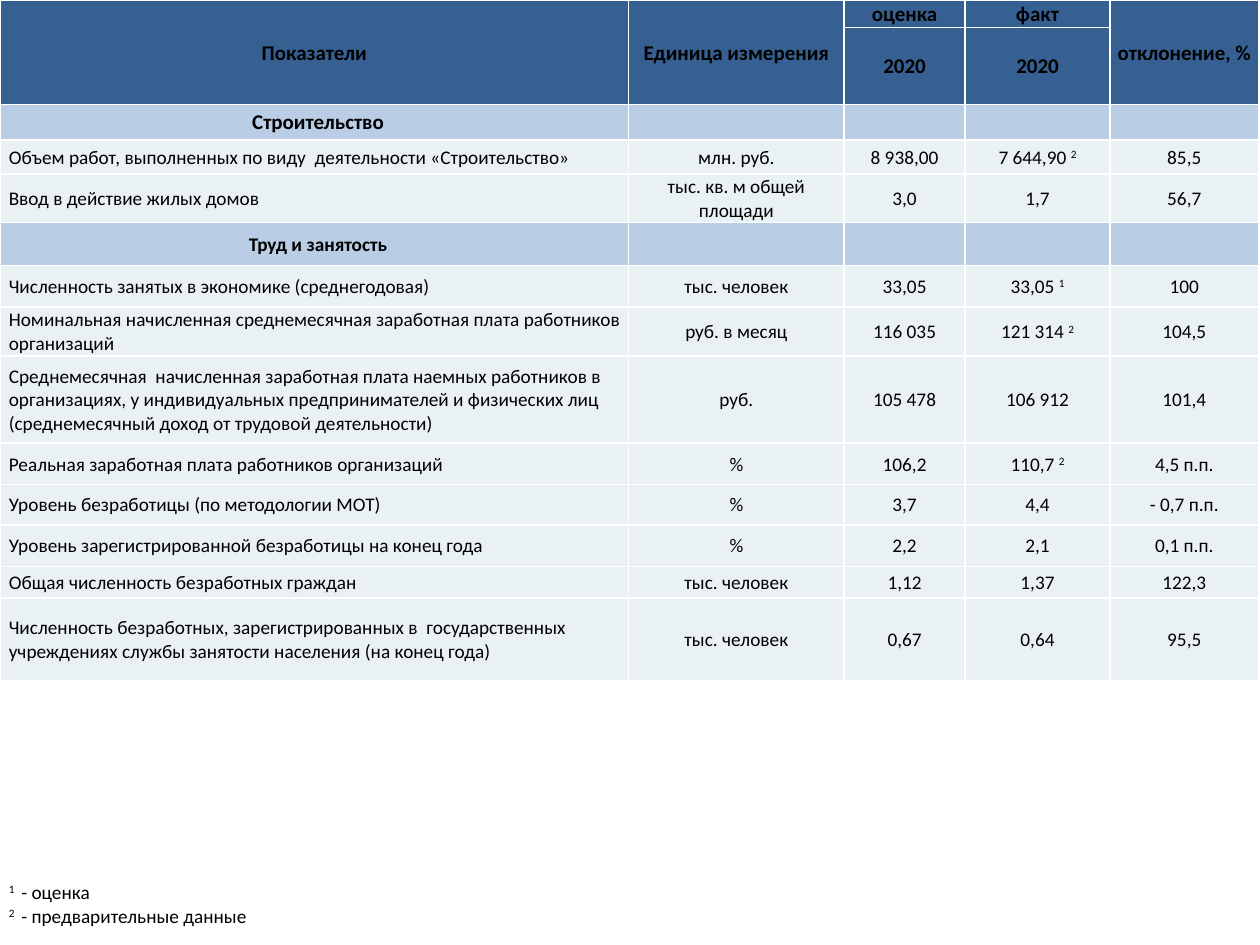
import lxml.etree
import pptx
import pptx.dml.color
import pptx.enum.text
import pptx.oxml.ns
import pptx.util

Inches = pptx.util.Inches
ALIGN = pptx.enum.text.PP_ALIGN
HEADER, SECTION, BODY, WHITE, BLACK = "376092", "B9CDE5", "E9F1F5", "FFFFFF", "000000"

COLUMN_WIDTHS = [4.99, 1.71, 0.96, 1.15, 1.18]
ROW_HEIGHTS = [0.22, 0.61, 0.28, 0.27, 0.38, 0.34, 0.33,
               0.39, 0.69, 0.33, 0.32, 0.33, 0.25, 0.66]
HEADERS = [
    ["Показатели", "Единица измерения", "оценка", "факт", "отклонение, %"],
    ["", "", "2020", "2020", ""],
]
INDICATORS = [
    ["Строительство"],
    ["Объем работ, выполненных по виду  деятельности «Строительство»",
     "млн. руб.", "8 938,00", "7 644,90 ^2", "85,5"],
    ["Ввод в действие жилых домов", "тыс. кв. м общей площади", "3,0", "1,7", "56,7"],
    ["Труд и занятость"],
    ["Численность занятых в экономике (среднегодовая)",
     "тыс. человек", "33,05", "33,05 ^1", "100"],
    ["Номинальная начисленная среднемесячная заработная плата работников организаций",
     "руб. в месяц", "116 035", "121 314 ^2", "104,5"],
    ["Среднемесячная  начисленная заработная плата наемных работников в организациях, "
     "у индивидуальных предпринимателей и физических лиц "
     "(среднемесячный доход от трудовой деятельности)",
     "руб.", "105 478", "106 912", "101,4"],
    ["Реальная заработная плата работников организаций",
     "%", "106,2", "110,7 ^2", "4,5 п.п."],
    ["Уровень безработицы (по методологии МОТ)", "%", "3,7", "4,4", "- 0,7 п.п."],
    ["Уровень зарегистрированной безработицы на конец года",
     "%", "2,2", "2,1", "0,1 п.п."],
    ["Общая численность безработных граждан", "тыс. человек", "1,12", "1,37", "122,3"],
    ["Численность безработных, зарегистрированных в  государственных учреждениях "
     "службы занятости населения (на конец года)",
     "тыс. человек", "0,67", "0,64", "95,5"],
]
FOOTNOTES = "^1 ^ - оценка\n^2 ^ - предварительные данные"


def color(value):
    return pptx.dml.color.RGBColor.from_string(value)


def apply_format(target, values):
    for name, value in values.items():
        setattr(target, name, value)


def add_borders(cell):
    properties = cell._tc.get_or_add_tcPr()
    qn = pptx.oxml.ns.qn
    for side in ("a:lnL", "a:lnR", "a:lnT", "a:lnB"):
        line = lxml.etree.SubElement(properties, qn(side), w=str(pptx.util.Pt(1)))
        fill = lxml.etree.SubElement(line, qn("a:solidFill"))
        lxml.etree.SubElement(fill, qn("a:srgbClr"), val=WHITE)


def write_para(para, text, size, bold, align):
    para.alignment = align
    if not text:
        para._p.get_or_add_endParaRPr().set("sz", str(size * 100))
        return
    for index, part in enumerate(text.split("^")):
        if not part:
            continue
        span = para.add_run()
        span.text = part
        apply_format(span.font, {"name": "Calibri", "size": pptx.util.Pt(size), "bold": bold})
        span.font.color.rgb = color(BLACK)
        if index % 2:
            span.font._element.set("baseline", "30000")


def fill_cell(cell, text, fill, size=11, bold=False, align=ALIGN.CENTER, left=0.01):
    apply_format(cell, {
        "margin_left": Inches(left),
        "margin_right": Inches(0.01),
        "margin_top": Inches(0.01),
        "margin_bottom": Inches(0),
        "vertical_anchor": pptx.enum.text.MSO_ANCHOR.MIDDLE,
    })
    add_borders(cell)
    cell.fill.solid()
    cell.fill.fore_color.rgb = color(fill)
    for index, line in enumerate(text.split("\n")):
        box = cell.text_frame
        para = box.add_paragraph() if index else box.paragraphs[0]
        write_para(para, line, size, bold, align)


def add_grid(page, top, widths, heights):
    frame = page.shapes.add_table(len(heights), len(widths), Inches(0), Inches(top),
                                  Inches(sum(widths)), Inches(sum(heights)))
    table = frame.table
    apply_format(table, {"first_row": False, "horz_banding": False})
    for column, width in zip(table.columns, widths):
        column.width = Inches(width)
    for row, height in zip(table.rows, heights):
        row.height = Inches(height)
    return table


def add_header(table):
    for row, texts in enumerate(HEADERS):
        for column, text in enumerate(texts):
            fill_cell(table.cell(row, column), text, HEADER, size=12, bold=True)
    for column in (0, 1, 4):
        table.cell(0, column).merge(table.cell(1, column))


def add_section(table, row, title, size):
    fill_cell(table.cell(row, 0), title, SECTION, size=size, bold=True, left=0.07)
    for column in range(1, len(COLUMN_WIDTHS)):
        fill_cell(table.cell(row, column), "", SECTION)


def add_indicator(table, row, texts):
    fill_cell(table.cell(row, 0), texts[0], BODY, align=ALIGN.LEFT, left=0.07)
    for column, text in enumerate(texts[1:], 1):
        fill_cell(table.cell(row, column), text, BODY)


def main():
    deck = pptx.Presentation()
    apply_format(deck, {"slide_width": Inches(10), "slide_height": Inches(7.5)})
    page = deck.slides.add_slide(deck.slide_layouts[6])

    table = add_grid(page, 0, COLUMN_WIDTHS, ROW_HEIGHTS)
    add_header(table)
    for row, texts in enumerate(INDICATORS, len(HEADERS)):
        if len(texts) == 1:
            add_section(table, row, texts[0], 12 if row == len(HEADERS) else 11)
        else:
            add_indicator(table, row, texts)

    notes = add_grid(page, 6.98, [10], [0.37])
    fill_cell(notes.cell(0, 0), FOOTNOTES, WHITE, align=ALIGN.LEFT, left=0.07)
    deck.save("out.pptx")


if __name__ == "__main__":
    main()
